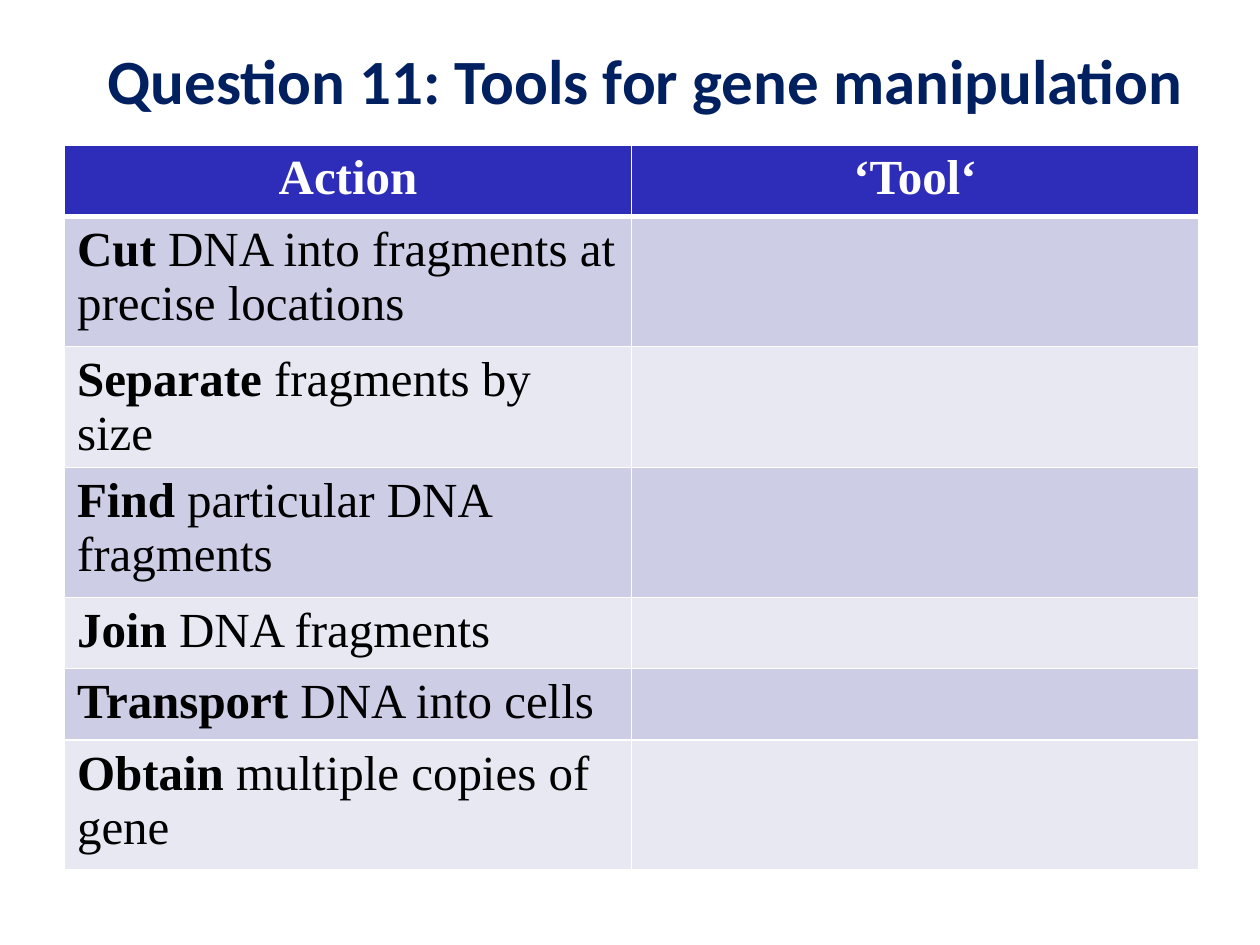
from typing import NamedTuple

from pptx import Presentation
from pptx.dml.color import RGBColor
from pptx.enum.text import MSO_ANCHOR, PP_ALIGN
from pptx.oxml import parse_xml
from pptx.oxml.ns import nsdecls
from pptx.util import Cm, Pt

CENTER, MIDDLE = PP_ALIGN.CENTER, MSO_ANCHOR.MIDDLE

NAVY = RGBColor(0x00, 0x20, 0x60)
BLUE = RGBColor(0x2D, 0x2D, 0xB9)
DARK = RGBColor(0xCD, 0xCD, 0xE6)
LIGHT = RGBColor(0xE8, 0xE8, 0xF3)
WHITE = RGBColor(0xFF, 0xFF, 0xFF)
BLACK = RGBColor(0x00, 0x00, 0x00)


class Step(NamedTuple):
    verb: str
    rest: str
    high: float


HEADS = ("Action", "‘Tool‘")
HEAD_HIGH = 1.44
STEPS = (
    Step("Cut", " DNA into fragments at precise locations", 2.62),
    Step("Separate", " fragments by size", 2.44),
    Step("Find", " particular DNA fragments", 2.62),
    Step("Join", " DNA fragments", 1.44),
    Step("Transport", " DNA into cells", 1.44),
    Step("Obtain", " multiple copies of gene", 2.62),
)


def add_run(para, text: str, font: str, size: int, color: RGBColor, bold: bool) -> None:
    run = para.add_run()
    run.text = text
    run.font.name, run.font.size, run.font.bold = font, Pt(size), bold
    run.font.color.rgb = color


def paint(cell, fill: RGBColor, top: int = 1, base: int = 1) -> None:
    """Give a cell white borders and a plain fill."""
    props = cell._tc.get_or_add_tcPr()
    for side, wide in (("L", 1), ("R", 1), ("T", top), ("B", base)):
        props.append(parse_xml(
            f'<a:ln{side} {nsdecls("a")} w="{Pt(wide)}"><a:solidFill>'
            f'<a:srgbClr val="{WHITE}"/></a:solidFill></a:ln{side}>'))
    cell.fill.solid()
    cell.fill.fore_color.rgb = fill


def add_title(slide, text: str) -> None:
    title = slide.shapes.title
    title.left, title.top, title.width, title.height = Cm(1.09), Cm(0), Cm(23.85), Cm(3.18)
    frame = title.text_frame
    frame.vertical_anchor = MIDDLE
    para = frame.paragraphs[0]
    para.alignment = CENTER
    add_run(para, text, "Calibri", 36, NAVY, True)


def add_grid(slide) -> None:
    highs = [HEAD_HIGH] + [step.high for step in STEPS]
    table = slide.shapes.add_table(
        len(highs), len(HEADS), Cm(1.3), Cm(2.92), Cm(22.86), Cm(sum(highs))).table
    for row, high in zip(table.rows, highs):
        row.height = Cm(high)

    # Header row
    for col, head in enumerate(HEADS):
        cell = table.cell(0, col)
        paint(cell, BLUE, base=3)
        para = cell.text_frame.paragraphs[0]
        para.alignment = CENTER
        add_run(para, head, "Times New Roman", 28, WHITE, True)

    # Banded rows, with the tool column left to fill in
    for num, step in enumerate(STEPS, 1):
        for col in range(len(HEADS)):
            paint(table.cell(num, col), DARK if num % 2 else LIGHT, top=3 if num == 1 else 1)
        para = table.cell(num, 0).text_frame.paragraphs[0]
        add_run(para, step.verb, "Times New Roman", 28, BLACK, True)
        add_run(para, step.rest, "Times New Roman", 28, BLACK, False)


def main() -> None:
    deck = Presentation()
    deck.slide_width, deck.slide_height = Cm(25.4), Cm(19.05)
    slide = deck.slides.add_slide(deck.slide_layouts.get_by_name("Title Only"))
    add_title(slide, "Question 11: Tools for gene manipulation")
    add_grid(slide)
    deck.save("out.pptx")


if __name__ == "__main__":
    main()
